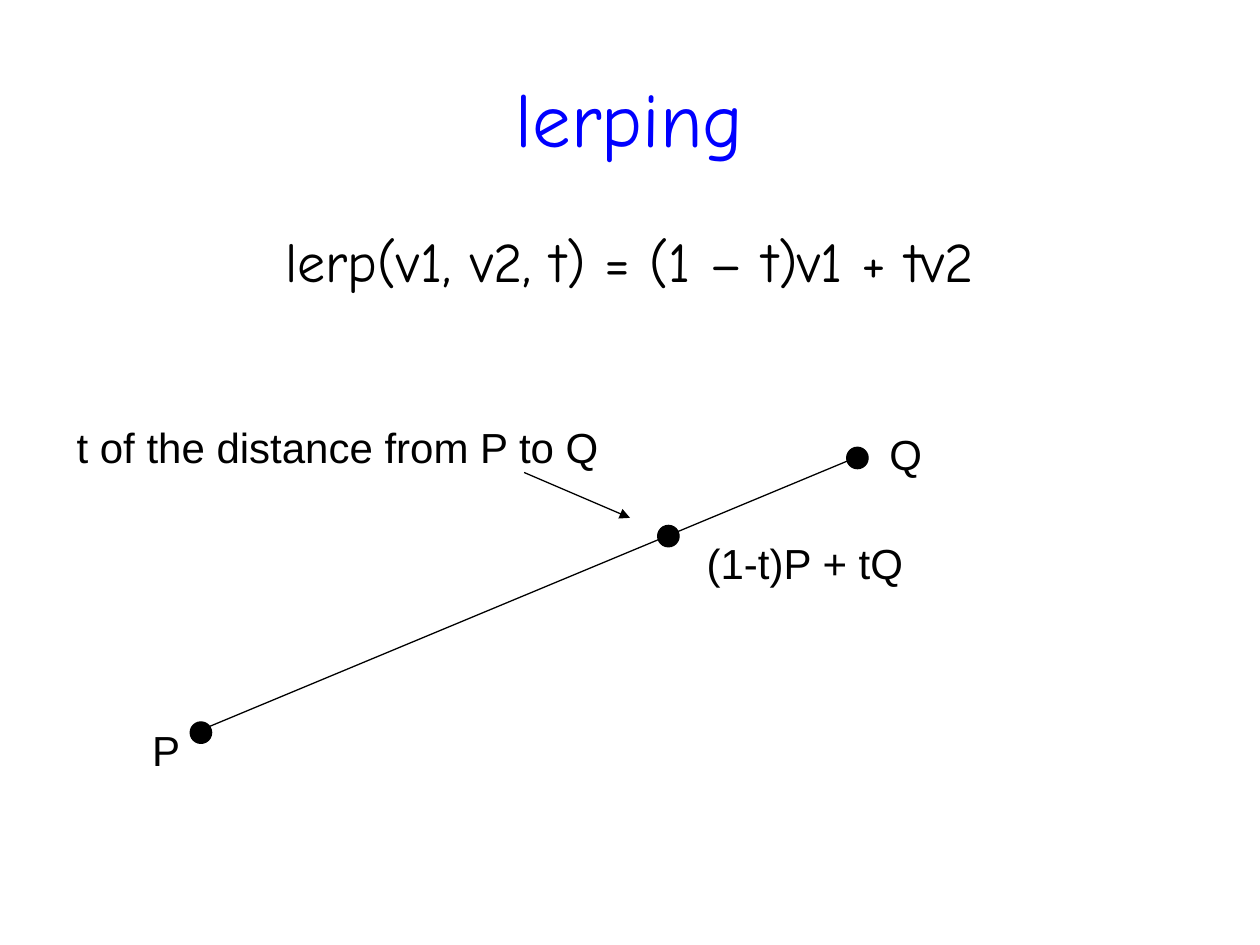
import pptx
import pptx.dml.color
import pptx.enum.shapes
import pptx.enum.text
import pptx.oxml
import pptx.oxml.ns
import pptx.util
from dataclasses import dataclass

Inches = pptx.util.Inches
Pt = pptx.util.Pt
ALIGN = pptx.enum.text.PP_ALIGN
ANCHOR = pptx.enum.text.MSO_ANCHOR


@dataclass(frozen=True)
class Theme:
    blue: str = "0000FF"
    black: str = "000000"
    heading_font: str = "Comic Neue"
    label_font: str = "Arial"
    title_size: int = 44
    formula_size: int = 32
    label_size: int = 24
    line_width: float = 0.75
    dot_size: float = 0.17


THEME = Theme()


def rgb(value):
    return pptx.dml.color.RGBColor.from_string(value)


def add_text(page, text, left, top, width, height, *, size=THEME.label_size,
             font=THEME.label_font, color=THEME.black, align=ALIGN.LEFT,
             anchor=ANCHOR.TOP):
    box = page.shapes.add_textbox(Inches(left), Inches(top), Inches(width), Inches(height))
    frame = box.text_frame
    frame.word_wrap = True
    frame.vertical_anchor = anchor
    para = frame.paragraphs[0]
    para.alignment = align
    span = para.add_run()
    span.text = text
    span.font.name = font
    span.font.size = Pt(size)
    span.font.color.rgb = rgb(color)


def add_dot(page, left, top):
    size = Inches(THEME.dot_size)
    dot = page.shapes.add_shape(pptx.enum.shapes.MSO_SHAPE.OVAL,
                                Inches(left), Inches(top), size, size)
    dot.shadow.inherit = False
    dot.fill.solid()
    dot.fill.fore_color.rgb = rgb(THEME.black)
    dot.line.color.rgb = rgb(THEME.black)
    dot.line.width = Pt(THEME.line_width)


def add_line(page, start, end, arrow=False):
    line = page.shapes.add_connector(pptx.enum.shapes.MSO_CONNECTOR.STRAIGHT,
                                     *map(Inches, start + end))
    line.line.color.rgb = rgb(THEME.black)
    line.line.width = Pt(THEME.line_width)
    properties = line._element.spPr
    if arrow:
        head = pptx.oxml.parse_xml(
            f'<a:tailEnd {pptx.oxml.ns.nsdecls("a")} type="triangle"/>')
        line.line._get_or_add_ln().append(head)
    properties.append(pptx.oxml.parse_xml(
        f'<a:effectLst {pptx.oxml.ns.nsdecls("a")}/>'))


def main():
    deck = pptx.Presentation()
    deck.slide_width, deck.slide_height = Inches(10), Inches(7.5)
    page = deck.slides.add_slide(deck.slide_layouts[6])

    add_text(page, "lerping", 0.5, 0.3, 9, 1.25, size=THEME.title_size,
             font=THEME.heading_font, color=THEME.blue, align=ALIGN.CENTER,
             anchor=ANCHOR.MIDDLE)
    add_text(page, "lerp(v1, v2, t) = (1 – t)v1 + tv2", 0.5, 1.75, 9, 4.95,
             size=THEME.formula_size, font=THEME.heading_font, align=ALIGN.CENTER)

    add_line(page, (1.58, 5.8), (6.82, 3.62))
    for left, top in [(1.51, 5.73), (6.72, 3.55), (5.22, 4.17)]:
        add_dot(page, left, top)

    for text, left, top, width in [
        ("P", 1.11, 5.7, 0.49),
        ("Q", 6.96, 3.35, 0.49),
        ("(1-t)P + tQ", 5.51, 4.22, 3.52),
        ("t of the distance from P to Q", 0.51, 3.3, 4.94),
    ]:
        add_text(page, text, left, top, width, 0.5)
    add_line(page, (4.16, 3.75), (5, 4.11), arrow=True)

    deck.save("out.pptx")


if __name__ == "__main__":
    main()
